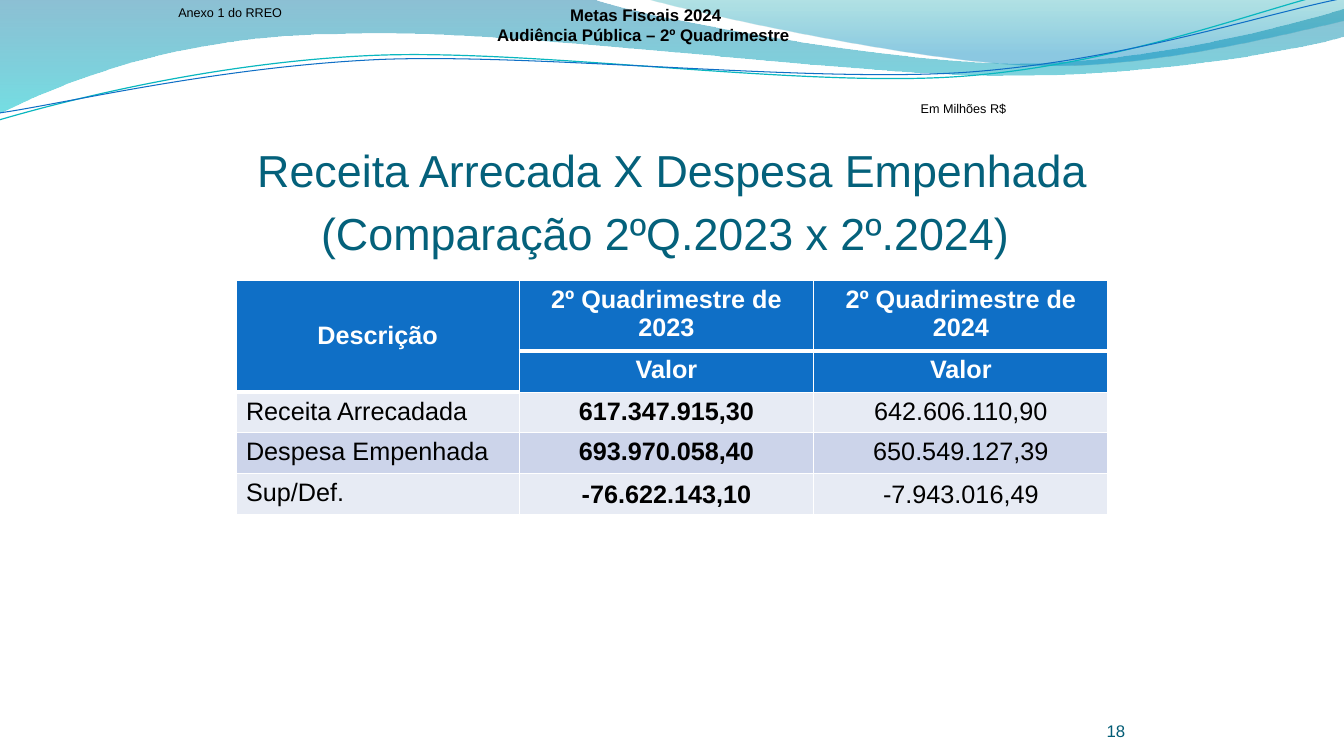
import pptx
import pptx.util
import pptx.dml.color
import pptx.enum.text
import pptx.oxml
import pptx.oxml.ns
from lxml import etree

Inches, Pt = pptx.util.Inches, pptx.util.Pt
ALIGN = pptx.enum.text.PP_ALIGN
ANCHOR = pptx.enum.text.MSO_ANCHOR
qn = pptx.oxml.ns.qn
COLORS = {
    "deep": "0074A0", "aqua": "00C4CD", "sky": "008ABF", "teal": "00A0A8",
    "line_teal": "09B7BF", "blue": "0F6FC6", "title": "04617B", "number": "035C75",
    "black": "000000", "white": "FFFFFF", "light": "E7EBF4", "band": "CCD4EA",
}
RGB = {name: pptx.dml.color.RGBColor.from_string(code) for name, code in COLORS.items()}


def draw_wave(start, segments, closed):
    """Draw an outline of straight (1 point) and cubic (3 points) segments."""
    builder = page.shapes.build_freeform(*map(Inches, start))
    ends = [tuple(map(Inches, segment[-1])) for segment in segments]
    builder.add_line_segments(ends, close=closed)
    wave = builder.convert_to_shape()
    wave.shadow.inherit = False
    edges = list(wave._element.iter(qn("a:lnTo")))
    for edge, segment in zip(edges, segments):
        if len(segment) == 3:
            curve = etree.Element(qn("a:cubicBezTo"))
            for x, y in segment:
                etree.SubElement(curve, qn("a:pt"), x=str(Inches(x) - wave.left),
                                 y=str(Inches(y) - wave.top))
            edge.getparent().replace(edge, curve)
    return wave


def write_text(frame, lines, align, font):
    for number, line in enumerate(lines):
        para = frame.paragraphs[0] if number == 0 else frame.add_paragraph()
        para.alignment = align
        span = para.add_run()
        span.text = line
        span.font.name = "Arial"
        span.font.size = Pt(font["size"])
        span.font.bold = font.get("bold", False)
        span.font.color.rgb = RGB[font["color"]]


deck = pptx.Presentation()
deck.slide_width, deck.slide_height = Inches(13.33), Inches(7.5)
page = deck.slides.add_slide(deck.slide_layouts[6])

# Header waves: start, segments, angle, gradient stops (color, position, opacity)
bands = [
    ((0, 0), [
        [(5.87, -0.01)],
        [(6.34, 0.17), (8.85, 0.63), (10.11, 0.63)],
        [(11.37, 0.63), (12.78, 0.26), (13.33, 0.09)],
        [(13.35, 0.36)],
        [(13.11, 0.44), (11.6, 0.76), (9.94, 0.75)],
        [(8.29, 0.75), (5.09, 0.28), (3.43, 0.34)],
        [(1.72, 0.35), (0.61, 0.83), (-0.01, 1.13)],
    ], 270, [("deep", 0, 45), ("aqua", 1, 55)]),
    ((6.39, -0.01), [
        [(6.79, 0.11), (9.09, 0.62), (10.25, 0.65)],
        [(11.41, 0.69), (12.82, 0.32), (13.33, 0.21)],
        [(13.33, 0)],
    ], 90, [("sky", 0.2, 45), ("teal", 1, 30)]),
]
for start, segments, angle, stops in bands:
    band = draw_wave(start, segments, True)
    band.line.fill.background()
    band.fill.gradient()
    band.fill.gradient_angle = angle
    for stop, (color, position, opacity) in zip(band.fill.gradient_stops, stops):
        stop.color.rgb = RGB[color]
        stop.position = position
    tints = band._element.spPr.iter(qn("a:srgbClr"))
    for tint, (color, position, opacity) in zip(tints, stops):
        etree.SubElement(tint, qn("a:alpha"), val=str(opacity * 1000))

strands = [
    ((-0.01, 1.19), [
        [(0.64, 1), (2.11, 0.62), (3.69, 0.55)],
        [(5.27, 0.48), (7.9, 0.87), (9.5, 0.76)],
        [(11.1, 0.65), (12.52, 0.08), (13.31, -0.1)],
    ], "line_teal", 0.85),
    ((0, 1.12), [
        [(0.63, 1.03), (2.18, 0.66), (3.78, 0.59)],
        [(5.37, 0.53), (7.96, 0.82), (9.55, 0.72)],
        [(11.15, 0.61), (12.55, 0.13), (13.34, -0.02)],
    ], "blue", 0.75),
]
for start, segments, color, width in strands:
    strand = draw_wave(start, segments, False)
    strand.fill.background()
    strand.line.color.rgb = RGB[color]
    strand.line.width = Pt(width)

# Text: place, margins (left, top, right, bottom), anchor, align, font, lines
title_font = {"size": 32, "color": "title"}
note_font = {"size": 9, "color": "black"}
title_margins, note_margins = (0, 0.05, 0, 0.07), (0.1, 0.05, 0.1, 0.05)
texts = [
    ((2.17, 0.77, 9, 1.25), title_margins, ANCHOR.BOTTOM, ALIGN.CENTER, title_font,
     ["Receita Arrecada X Despesa Empenhada"]),
    ((2.1, 1.39, 9, 1.25), title_margins, ANCHOR.BOTTOM, ALIGN.CENTER, title_font,
     ["(Comparação 2ºQ.2023 x 2º.2024)"]),
    ((10.33, 6.95, 0.83, 0.4), (0, 0, 0, 0), ANCHOR.BOTTOM, ALIGN.RIGHT,
     {"size": 12, "color": "number"}, ["18"]),
    ((9.03, 0.95, 1.05, 0.25), note_margins, ANCHOR.TOP, ALIGN.CENTER, note_font,
     ["Em Milhões R$"]),
    ((1.67, 0, 1.36, 0.25), note_margins, ANCHOR.TOP, ALIGN.LEFT, note_font,
     ["Anexo 1 do RREO"]),
    ((4.71, 0, 3.39, 0.5), note_margins, ANCHOR.MIDDLE, ALIGN.CENTER,
     {"size": 12, "color": "black", "bold": True},
     ["Metas Fiscais 2024", "Audiência Pública – 2º Quadrimestre "]),
]
for place, margins, anchor, align, font, lines in texts:
    box = page.shapes.add_textbox(*map(Inches, place))
    frame = box.text_frame
    frame.word_wrap = True
    frame.vertical_anchor = anchor
    for side, margin in zip(("left", "top", "right", "bottom"), margins):
        setattr(frame, f"margin_{side}", Inches(margin))
    write_text(frame, lines, align, font)

# Comparison table
rows = [
    ["Descrição", "2º Quadrimestre de 2023", "2º Quadrimestre de 2024"],
    ["", "Valor", "Valor"],
    ["Receita Arrecadada", "617.347.915,30", "642.606.110,90"],
    ["Despesa Empenhada", "693.970.058,40", "650.549.127,39"],
    ["Sup/Def.", "-76.622.143,10", "-7.943.016,49"],
]
row_fills = ["blue", "blue", "light", "band", "light"]
table = page.shapes.add_table(5, 3, *map(Inches, (2.34, 2.78, 8.65, 2.32))).table
for column, width in zip(table.columns, (2.81, 2.92, 2.92)):
    column.width = Inches(width)
for row, height in zip(table.rows, (0.7, 0.41, 0.4, 0.41, 0.4)):
    row.height = Inches(height)
table.cell(0, 0).merge(table.cell(1, 0))

for r, values in enumerate(rows):
    for c, value in enumerate(values):
        cell = table.cell(r, c)
        header = r < 2
        balance = r == 4 and c > 0
        cell.fill.solid()
        cell.fill.fore_color.rgb = RGB[row_fills[r]]
        cell.vertical_anchor = ANCHOR.MIDDLE if balance or (r, c) == (0, 0) else ANCHOR.TOP
        if balance:
            cell.margin_left = cell.margin_top = cell.margin_right = Inches(0.01)
            cell.margin_bottom = 0
        if value:
            font = {"size": 18, "bold": header or c == 1,
                    "color": "white" if header else "black"}
            align = ALIGN.CENTER if header or c else ALIGN.LEFT
            write_text(cell.text_frame, [value], align, font)
        thick_edge = 2 if c == 0 else 1
        widths = {"L": 0.96, "R": 0.96, "T": 3 if r == thick_edge else 0.96,
                  "B": 3 if r + 1 == thick_edge or (r, c) == (0, 0) else 0.96}
        properties = cell._tc.get_or_add_tcPr()
        for position, (side, width) in enumerate(widths.items()):
            properties.insert(position, pptx.oxml.parse_xml(
                f'<a:ln{side} {pptx.oxml.ns.nsdecls("a")} w="{Pt(width)}"><a:solidFill>'
                f'<a:srgbClr val="{COLORS["white"]}"/></a:solidFill></a:ln{side}>'))

deck.save("out.pptx")
